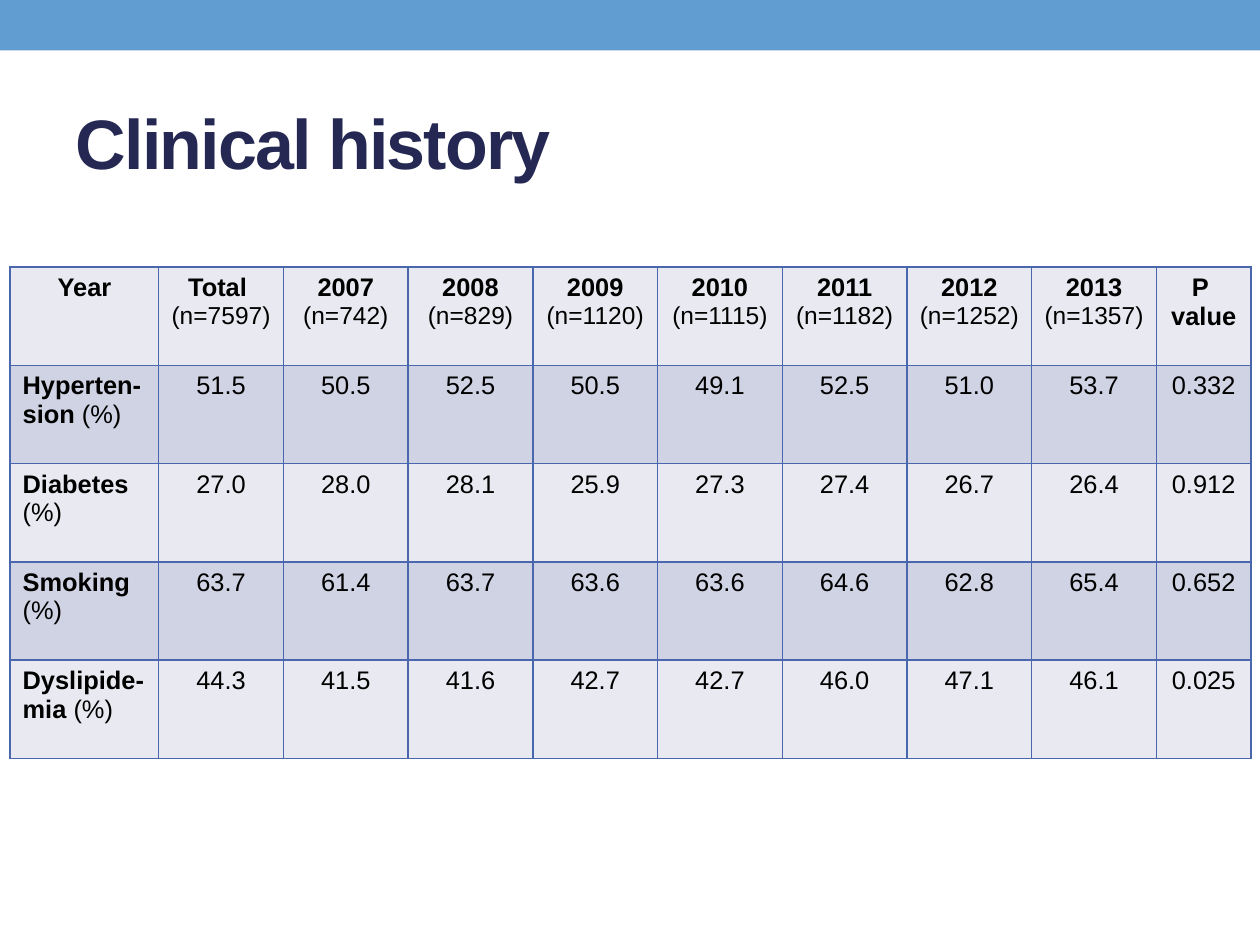
from lxml import etree
from pptx import Presentation
from pptx.dml.color import RGBColor
from pptx.enum.shapes import MSO_SHAPE
from pptx.enum.text import MSO_ANCHOR, PP_ALIGN
from pptx.oxml.ns import qn
from pptx.util import Inches, Pt

RECT = MSO_SHAPE.RECTANGLE
MIDDLE = MSO_ANCHOR.MIDDLE
LEFT, CENTER = PP_ALIGN.LEFT, PP_ALIGN.CENTER
FONT = "Arial"
BORDER = "4A66AC"
BANDS = ("E9EAF1", "D0D3E3")
COLS = [1.18] + [0.99] * 8 + [0.75]
ROW_HEIGHT = 0.78

GROUPS = [("Total ", 7597), ("2007", 742), ("2008", 829), ("2009", 1120),
          ("2010", 1115), ("2011", 1182), ("2012", 1252), ("2013", 1357)]
HISTORY = [
    ("Hyperten-sion ", "(%)", "51.5 50.5 52.5 50.5 49.1 52.5 51.0 53.7 0.332"),
    ("Diabetes", " (%)", "27.0 28.0 28.1 25.9 27.3 27.4 26.7 26.4 0.912"),
    ("Smoking", " (%)", "63.7 61.4 63.7 63.6 63.6 64.6 62.8 65.4 0.652"),
    ("Dyslipide-mia ", "(%)", "44.3 41.5 41.6 42.7 42.7 46.0 47.1 46.1 0.025"),
]


def rgb(color):
    return RGBColor.from_string(color)


def add_run(p, text, size, color="000000", bold=False):
    r = p.add_run()
    r.text = text
    r.font.name = FONT
    r.font.size = Pt(size)
    r.font.bold = bold
    r.font.color.rgb = rgb(color)
    return r


def set_borders(cell):
    tc_pr = cell._tc.get_or_add_tcPr()
    for i, side in enumerate(("a:lnL", "a:lnR", "a:lnT", "a:lnB")):
        ln = etree.Element(qn(side), w=str(Pt(1)))
        fill = etree.SubElement(ln, qn("a:solidFill"))
        etree.SubElement(fill, qn("a:srgbClr"), val=BORDER)
        tc_pr.insert(i, ln)


def fill_cell(cell, paragraphs, align, color):
    cell.fill.solid()
    cell.fill.fore_color.rgb = rgb(color)
    set_borders(cell)
    tf = cell.text_frame
    for i, runs in enumerate(paragraphs):
        p = tf.add_paragraph() if i else tf.paragraphs[0]
        p.alignment = align
        for text, size, bold in runs:
            add_run(p, text, size, bold=bold)


def add_band(s, x, y, w, h):
    sp = s.shapes.add_shape(RECT, Inches(x), Inches(y), Inches(w), Inches(h))
    sp.shadow.inherit = False
    sp.fill.solid()
    sp.fill.fore_color.rgb = rgb("629DD1")
    sp.line.fill.background()


def add_title(s, x, y, w, h):
    sp = s.shapes.title
    sp.left, sp.top, sp.width, sp.height = map(Inches, (x, y, w, h))
    tf = sp.text_frame
    tf.vertical_anchor = MIDDLE
    p = tf.paragraphs[0]
    p.alignment = LEFT
    r = add_run(p, "Clinical history", 40, "242852", True)
    r.font._element.set("spc", "-100")


def table_rows():
    header = [[[("Year", 14.5, True)]]]
    header += [[[(name, 14.5, True)], [(f"(n={n})", 14, False)]]
               for name, n in GROUPS]
    header.append([[("P ", 14.5, True)], [("value", 14.5, True)]])
    rows = [header]
    for name, unit, values in HISTORY:
        label = [[(name, 14.5, True), (unit, 14.5, False)]]
        rows.append([label] + [[[(v, 14.5, False)]] for v in values.split()])
    return rows


def add_history_table(s, x, y):
    rows = table_rows()
    table = s.shapes.add_table(
        len(rows), len(COLS), Inches(x), Inches(y),
        Inches(sum(COLS)), Inches(ROW_HEIGHT * len(rows))).table
    for col, width in zip(table.columns, COLS):
        col.width = Inches(width)
    for i, row in enumerate(rows):
        table.rows[i].height = Inches(ROW_HEIGHT)
        for j, paragraphs in enumerate(row):
            align = LEFT if i and not j else CENTER
            fill_cell(table.cell(i, j), paragraphs, align, BANDS[i % 2])


def main():
    prs = Presentation()
    prs.slide_width, prs.slide_height = Inches(10), Inches(7.5)
    s = prs.slides.add_slide(prs.slide_layouts[5])
    add_band(s, 0, 0, 10, 0.4)
    add_title(s, 0.5, 0.58, 9, 1.08)
    add_history_table(s, 0.08, 2.12)
    prs.save("out.pptx")


if __name__ == "__main__":
    main()
